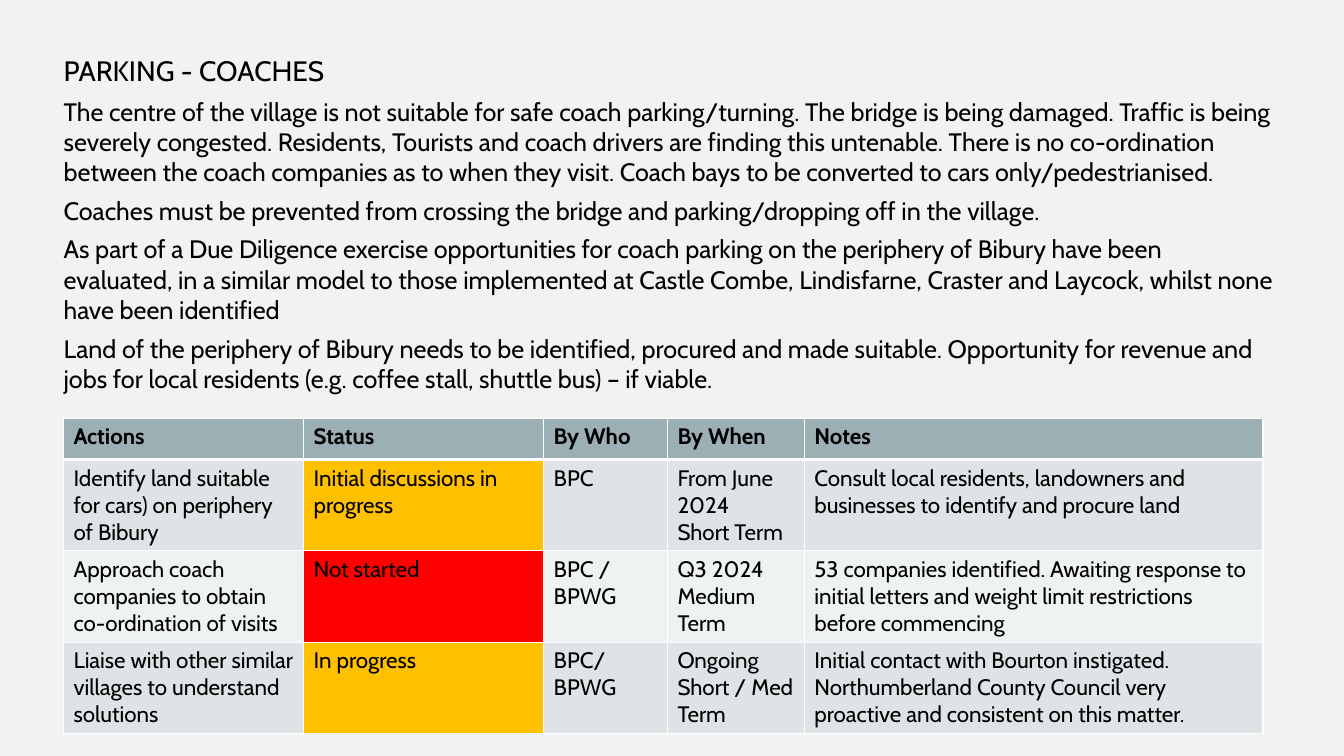
from lxml.etree import SubElement
from pptx import Presentation
from pptx.dml.color import RGBColor as RGB
from pptx.enum.text import MSO_ANCHOR as Anchor, MSO_AUTO_SIZE as Fit, PP_ALIGN as Align
from pptx.oxml.ns import qn
from pptx.util import Cm, Pt

HUES = {"page": "F2F2F2", "ink": "000000", "line": "FFFFFF", "head": "9BAFB5",
        "dark": "DEE3E5", "light": "EFF2F3", "amber": "FFC000", "red": "FF0000"}
LOOK = {"title": {"size": Pt(20), "bold": False},
        "body": {"size": Pt(18), "bold": False},
        "head": {"size": Pt(16), "bold": True},
        "cell": {"size": Pt(16), "bold": False}}
FRAME = {"word_wrap": True, "auto_size": Fit.NONE, "vertical_anchor": Anchor.TOP}
SPACE = {"alignment": Align.LEFT, "line_spacing": 1.0,
         "space_before": Pt(0), "space_after": Pt(6)}

POINTS = [
    "The centre of the village is not suitable for safe coach parking/turning. "
    "The bridge is being damaged. Traffic is being severely congested. "
    "Residents, Tourists and coach drivers are finding this untenable. "
    "There is no co-ordination between the coach companies as to when they visit. "
    "Coach bays to be converted to cars only/pedestrianised.",
    "Coaches must be prevented from crossing the bridge and parking/dropping off "
    "in the village.",
    "As part of a Due Diligence exercise opportunities for coach parking on the "
    "periphery of Bibury have been evaluated, in a similar model to those implemented "
    "at Castle Combe, Lindisfarne, Craster and Laycock, whilst none have been identified",
    "Land of the periphery of Bibury needs to be identified, procured and made suitable. "
    "Opportunity for revenue and jobs for local residents (e.g. coffee stall, "
    "shuttle bus) – if viable.",
]
ROWS = [
    ["Actions", "Status", "By Who", "By When", "Notes"],
    ["Identify land suitable for cars) on periphery of Bibury",
     "Initial discussions in progress", "BPC", "From June 2024\nShort Term",
     "Consult local residents, landowners and businesses to identify and procure land"],
    ["Approach coach companies to obtain co-ordination of visits",
     "Not started", "BPC / BPWG", "Q3 2024\nMedium Term",
     "53 companies identified. Awaiting response to initial letters and weight limit "
     "restrictions before commencing"],
    ["Liaise with other similar villages to understand solutions",
     "In progress", "BPC/\nBPWG", "Ongoing Short / Med Term",
     "Initial contact with Bourton instigated. Northumberland County Council very "
     "proactive and consistent on this matter."],
]
BANDS = ["head", "dark", "light", "dark"]
STATES = ["head", "amber", "red", "amber"]
WIDTHS = [6.05, 6.05, 3.12, 3.45, 11.56]
HEIGHTS = [1.04, 2.29, 2.29, 2.29]


def style(font, look):
    for key, value in LOOK[look].items():
        setattr(font, key, value)
    font.name = "Cabin"
    font.color.rgb = RGB.from_string(HUES["ink"])


def edge(cell, side, width):
    """Draw one cell border; side is L, R, T or B."""
    line = SubElement(cell._tc.get_or_add_tcPr(), qn(f"a:ln{side}"), w=str(Pt(width)))
    fill = SubElement(line, qn("a:solidFill"))
    SubElement(fill, qn("a:srgbClr"), val=HUES["line"])


deck = Presentation()
deck.slide_width, deck.slide_height = Cm(33.87), Cm(19.05)
slide = deck.slides.add_slide(deck.slide_layouts[1])
slide.background.fill.solid()
slide.background.fill.fore_color.rgb = RGB.from_string(HUES["page"])

# Title and body text
title, body = slide.placeholders
for shape, look, top, height, lines in [
        (title, "title", 1.22, 1.1, ["PARKING - COACHES"]),
        (body, "body", 2.29, 7.82, POINTS)]:
    shape.left, shape.top = Cm(1.35), Cm(top)
    shape.width, shape.height = Cm(31.06), Cm(height)
    frame = shape.text_frame
    frame.text = "\n".join(lines)
    for key, value in FRAME.items():
        setattr(frame, key, value)
    for para in frame.paragraphs:
        props = para._p.get_or_add_pPr()
        props.set("marL", "0")
        props.set("indent", "0")
        SubElement(props, qn("a:buNone"))
        for key, value in SPACE.items():
            setattr(para, key, value)
        style(para.runs[0].font, look)

# Action table
table = slide.shapes.add_table(len(ROWS), len(WIDTHS), Cm(1.6), Cm(10.54),
                               Cm(sum(WIDTHS)), Cm(sum(HEIGHTS))).table
for col, width in zip(table.columns, WIDTHS):
    col.width = Cm(width)
for r, (row, height) in enumerate(zip(table.rows, HEIGHTS)):
    row.height = Cm(height)
    for c, cell in enumerate(row.cells):
        cell.text = ROWS[r][c]
        for para in cell.text_frame.paragraphs:
            style(para.runs[0].font, "cell" if r else "head")
        for side in "LRTB":
            thick = (r, side) in [(0, "B"), (1, "T")]
            edge(cell, side, 3 if thick else 1)
        cell.fill.solid()
        hue = STATES[r] if c == 1 else BANDS[r]
        cell.fill.fore_color.rgb = RGB.from_string(HUES[hue])

deck.save("out.pptx")
